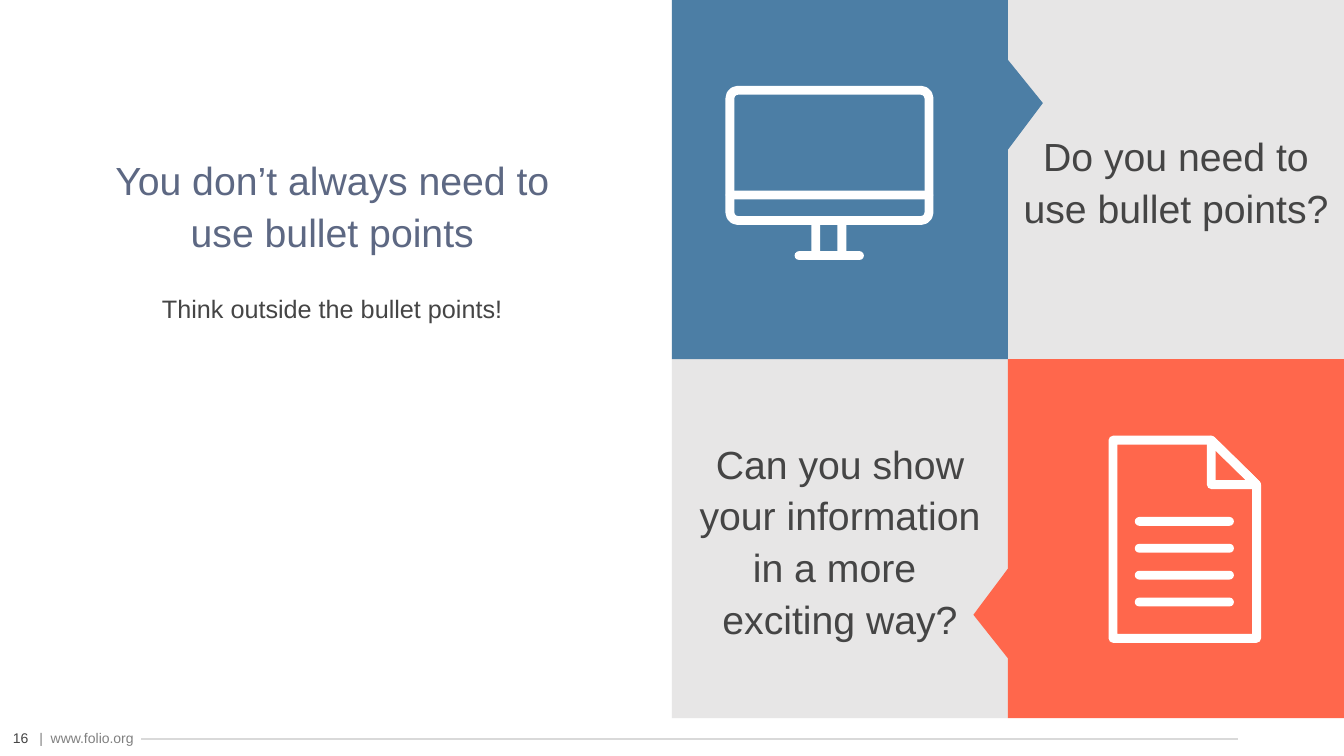
from dataclasses import dataclass

from lxml.etree import SubElement
from pptx import Presentation
from pptx.dml.color import RGBColor
from pptx.enum.shapes import MSO_CONNECTOR, MSO_SHAPE
from pptx.enum.text import MSO_ANCHOR, MSO_AUTO_SIZE, PP_ALIGN
from pptx.oxml.ns import qn
from pptx.util import Inches, Pt


@dataclass(frozen=True)
class Theme:
    font: str = "Arial"
    ink: str = "454545"
    title: str = "5D6883"
    muted: str = "808080"
    rule: str = "D9D9D9"
    panel: str = "E7E6E6"
    blue: str = "4C7EA5"
    coral: str = "FF674C"
    white: str = "FFFFFF"
    large: int = 28
    body: int = 18
    small: int = 10
    stroke: float = 6.3


def assign(target, values):
    for name, value in values.items():
        setattr(target, name, value)


class Deck:
    """Places elements on a grid of 160 columns by 90 rows."""

    def __init__(self, theme):
        self.theme = theme
        self.file = Presentation()
        assign(self.file, {"slide_width": Inches(13.333), "slide_height": Inches(7.5)})
        self.slide = self.file.slides.add_slide(self.file.slide_layouts[5])
        self.shapes = self.slide.shapes

    def x(self, cols):
        return round(self.file.slide_width * cols / 160)

    def y(self, rows):
        return round(self.file.slide_height * rows / 90)

    def box(self, left, top, width, height):
        return self.x(left), self.y(top), self.x(width), self.y(height)

    def label(self, shape, text, size, color, align=PP_ALIGN.CENTER,
              anchor=MSO_ANCHOR.TOP, pitch=1.1):
        frame = shape.text_frame
        frame.text = text
        assign(frame, {"word_wrap": True, "auto_size": MSO_AUTO_SIZE.NONE,
                       "vertical_anchor": anchor})
        para = frame.paragraphs[0]
        assign(para, {"alignment": align, "line_spacing": pitch})
        assign(para.font, {"name": self.theme.font, "size": Pt(size)})
        para.font.color.rgb = RGBColor.from_string(color)

    def title(self, text, *area):
        shape = self.shapes.title
        assign(shape, dict(zip(("left", "top", "width", "height"), self.box(*area))))
        self.label(shape, text, self.theme.large, self.theme.title,
                   anchor=MSO_ANCHOR.BOTTOM)

    def text(self, text, size, color, *area, **style):
        self.label(self.shapes.add_textbox(*self.box(*area)), text, size, color, **style)

    def fill(self, kind, color, *area, adjust=()):
        shape = self.shapes.add_shape(kind, *self.box(*area))
        shape.shadow.inherit = False
        shape.fill.solid()
        shape.fill.fore_color.rgb = RGBColor.from_string(color)
        shape.line.fill.background()
        for index, value in enumerate(adjust):
            shape.adjustments[index] = value
        return shape

    def panel(self, text, *area):
        shape = self.fill(MSO_SHAPE.RECTANGLE, self.theme.panel, *area)
        self.label(shape, text, self.theme.large, self.theme.ink,
                   anchor=MSO_ANCHOR.MIDDLE)

    def bar(self, *area):
        self.fill(MSO_SHAPE.ROUNDED_RECTANGLE, self.theme.white, *area, adjust=[0.5])

    def stroke(self, shape):
        shape.shadow.inherit = False
        shape.fill.background()
        shape.line.color.rgb = RGBColor.from_string(self.theme.white)
        shape.line.width = Pt(self.theme.stroke)

    def frame(self, corner, *area):
        shape = self.shapes.add_shape(MSO_SHAPE.ROUNDED_RECTANGLE, *self.box(*area))
        shape.adjustments[0] = corner
        self.stroke(shape)

    def outline(self, points):
        start, *rest = [(self.x(col), self.y(row)) for col, row in points]
        shape = self.shapes.build_freeform(*start)
        shape.add_line_segments(rest, close=True)
        self.stroke(shape.convert_to_shape())

    def rule(self, left, right, row):
        line = self.shapes.add_connector(MSO_CONNECTOR.STRAIGHT, self.x(left),
                                         self.y(row), self.x(right), self.y(row))
        line.line.color.rgb = RGBColor.from_string(self.theme.rule)
        line.line.width = Pt(1)
        SubElement(line._element.spPr, qn("a:effectLst"))


def main():
    theme = Theme()
    deck = Deck(theme)

    # Footer
    foot, deep = 86.25, 3.25
    deck.text("|  www.folio.org", theme.small, theme.muted, 3.5, foot, 23.25, deep,
              align=PP_ALIGN.LEFT, pitch=1)
    deck.text("16", theme.small, theme.ink, -0.5, foot, 5.9, deep,
              anchor=MSO_ANCHOR.MIDDLE, pitch=1)
    deck.rule(16.8, 147.4, 88)

    # Message
    deck.title("You don’t always need to use bullet points", 11, 4.8, 57.1, 26.15)
    deck.text("Think outside the bullet points!", theme.body, theme.ink,
              11, 34, 57.1, 23.3)

    # Checkerboard of tiles
    wide, high = 40, 42.75
    mid, right = 2 * wide, 3 * wide
    deck.panel("Can you show your information in a more \vexciting way?",
               mid, high, wide, high)
    deck.panel("Do you need to use bullet points?", right, 0, wide, high)
    for color, left, top, tip in ((theme.coral, right, high, (-0.603, 0.212)),
                                  (theme.blue, mid, 0, (0.604, -0.213))):
        deck.fill(MSO_SHAPE.RECTANGULAR_CALLOUT, color, left, top, wide, high,
                  adjust=tip)

    # Document icon
    thick = 1.05
    near, fold, far = 132.5, 144.2, 149.6
    head, crease, base = 52.4, 57.7, 76
    deck.outline([(near, head), (fold, head), (far, crease), (far, base), (near, base)])
    deck.outline([(fold, head), (fold, crease), (far, crease)])
    for step in range(4):
        deck.bar(135.1, 61.55 + 3.2 * step, 11.8, thick)

    # Monitor icon
    deck.frame(0.06, 86.9, 10.75, 23.7, 15.5)
    deck.bar(86.4, 22.7, 24.7, thick)
    for post in (96.6, 99.7):
        deck.bar(post, 25.8, thick, 5.15)
    deck.bar(94.6, 29.9, 8.25, thick)

    deck.file.save("out.pptx")


if __name__ == "__main__":
    main()
